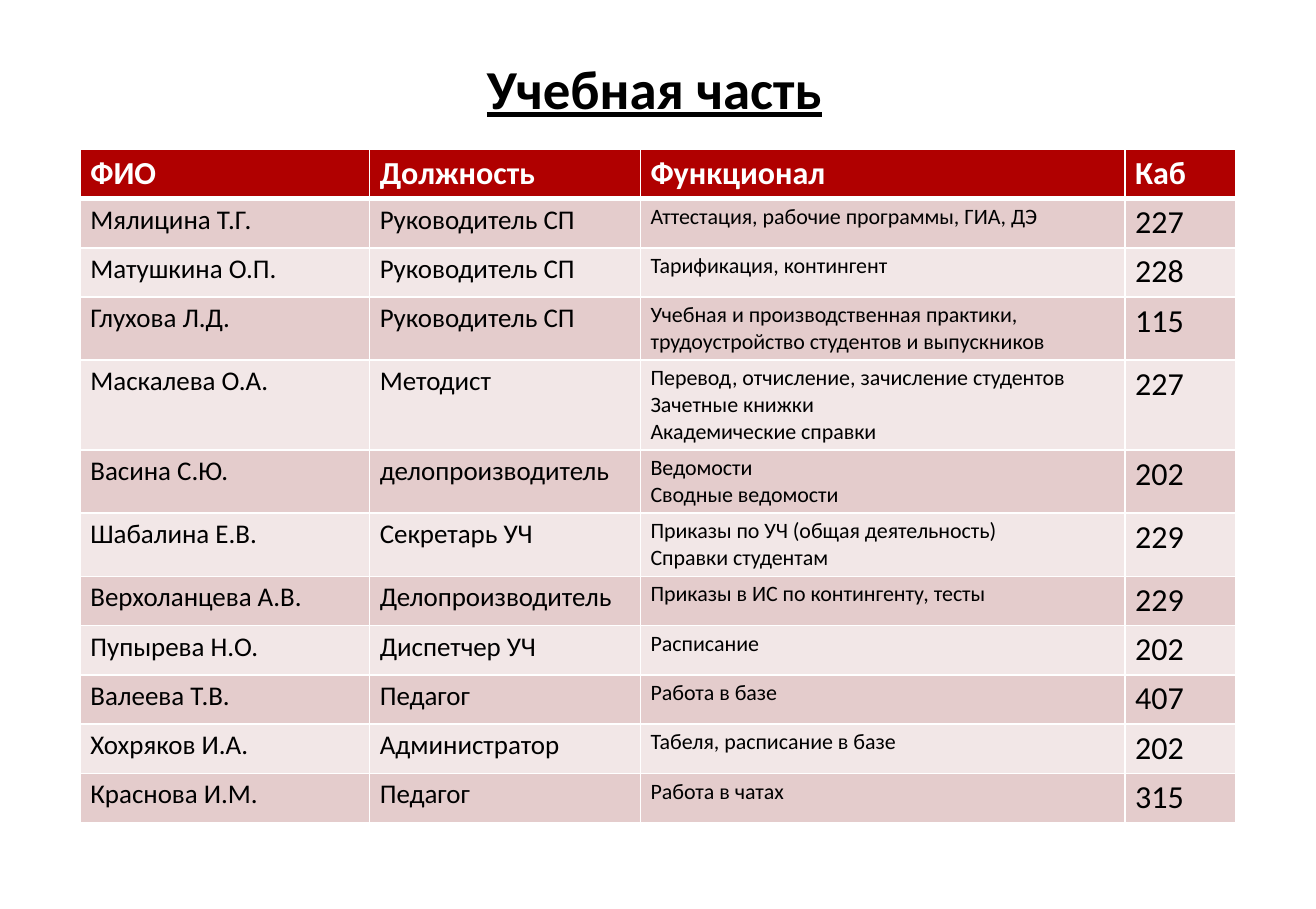
from math import ceil

from lxml.etree import SubElement
from pptx import Presentation
from pptx.dml.color import RGBColor
from pptx.enum.text import MSO_ANCHOR, MSO_AUTO_SIZE, PP_ALIGN
from pptx.oxml.ns import qn
from pptx.util import Cm, Pt

COLORS = {
    "title": "000000",
    "header": "B00000",
    "header_text": "FFFFFF",
    "odd": "E4CCCC",
    "even": "F2E7E7",
    "text": "000000",
    "rule": "FFFFFF",
}
FONT = "Calibri"
TITLE_BOX = (9.87, 1.0, 7.62, 1.65)
TABLE_BOX = (1.68, 3.12, 24.15, 14.02)
COLUMN_WIDTHS = (6.05, 5.66, 10.13, 2.31)
BODY_SIZES = (16, 16, 13, 19)
HEADER_SIZE = 19
LINE_HEIGHTS = {1: 1.03, 2: 1.3, 3: 1.85}
DUTY_LINE_CHARS = 48

HEADERS = ("ФИО", "Должность", "Функционал", "Каб")
STAFF = [
    ("Мялицина Т.Г.", "Руководитель СП", "Аттестация, рабочие программы, ГИА, ДЭ", "227"),
    ("Матушкина О.П.", "Руководитель СП", "Тарификация, контингент", "228"),
    ("Глухова Л.Д.", "Руководитель СП",
     "Учебная и производственная практики, трудоустройство студентов и выпускников", "115"),
    ("Маскалева О.А.", "Методист",
     "Перевод, отчисление, зачисление студентов\nЗачетные книжки\nАкадемические справки", "227"),
    ("Васина С.Ю.", "делопроизводитель", "Ведомости\nСводные ведомости", "202"),
    ("Шабалина Е.В.", "Секретарь УЧ",
     "Приказы по УЧ (общая деятельность)\nСправки студентам", "229"),
    ("Верхоланцева А.В.", "Делопроизводитель", "Приказы в ИС по контингенту, тесты", "229"),
    ("Пупырева Н.О.", "Диспетчер УЧ", "Расписание", "202"),
    ("Валеева Т.В.", "Педагог", "Работа в базе", "407"),
    ("Хохряков И.А.", "Администратор", "Табеля, расписание в базе", "202"),
    ("Краснова И.М.", "Педагог", "Работа в чатах", "315"),
]


def color(name):
    return RGBColor.from_string(COLORS[name])


def style_font(font, size, color_name, bold):
    font.name = FONT
    font.size = Pt(size)
    font.bold = bold
    font.color.rgb = color(color_name)


def add_title(page, box, text):
    title = page.shapes.title
    title.left, title.top, title.width, title.height = (Cm(value) for value in box)
    frame = title.text_frame
    frame.text = text
    frame.word_wrap = False
    frame.auto_size = MSO_AUTO_SIZE.NONE
    frame.vertical_anchor = MSO_ANCHOR.MIDDLE
    para = frame.paragraphs[0]
    para.alignment = PP_ALIGN.CENTER
    style_font(para.font, 32.5, "title", True)
    para.font.underline = True


def set_borders(cell, top, bottom):
    properties = cell._tc.get_or_add_tcPr()
    widths = {"a:lnL": 1, "a:lnR": 1, "a:lnT": top, "a:lnB": bottom}
    for tag, width in widths.items():
        line = SubElement(properties, qn(tag), w=str(Pt(width)))
        fill = SubElement(line, qn("a:solidFill"))
        SubElement(fill, qn("a:srgbClr"), val=COLORS["rule"])


def fill_cell(cell, text, size, row):
    header = row == 0
    set_borders(cell, 3 if row == 1 else 1, 3 if header else 1)
    cell.fill.solid()
    cell.fill.fore_color.rgb = color("header" if header else "odd" if row % 2 else "even")
    cell.margin_left = cell.margin_right = Cm(0.21)
    cell.margin_top = cell.margin_bottom = Cm(0.1)
    cell.text = text
    for para in cell.text_frame.paragraphs:
        style_font(para.font, size, "header_text" if header else "text", header)


def count_lines(duties):
    return sum(ceil(len(duty) / DUTY_LINE_CHARS) for duty in duties.split("\n"))


def add_staff_table(page, box):
    records = [HEADERS, *STAFF]
    frame = page.shapes.add_table(
        len(records), len(HEADERS), *(Cm(value) for value in box))
    table = frame.table
    for column, width in zip(table.columns, COLUMN_WIDTHS):
        column.width = Cm(width)
    for row, record in enumerate(records):
        table.rows[row].height = Cm(LINE_HEIGHTS[count_lines(record[2])])
        for column, text in enumerate(record):
            size = BODY_SIZES[column] if row else HEADER_SIZE
            fill_cell(table.cell(row, column), text, size, row)


def main():
    deck = Presentation()
    deck.slide_width, deck.slide_height = Cm(27.51), Cm(19)
    page = deck.slides.add_slide(deck.slide_layouts[5])
    add_title(page, TITLE_BOX, "Учебная часть")
    add_staff_table(page, TABLE_BOX)
    deck.save("out.pptx")


if __name__ == "__main__":
    main()
